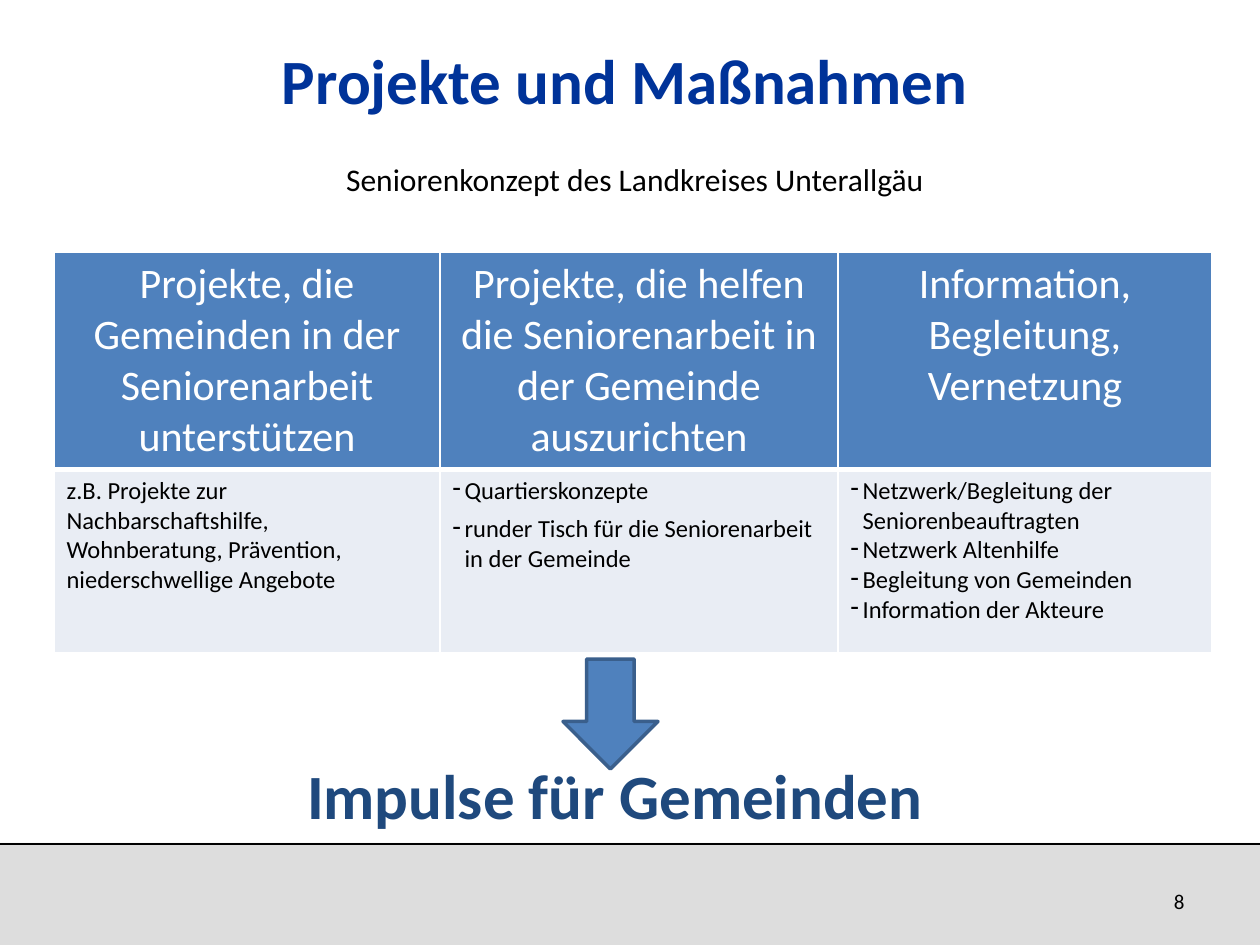
import pptx
import pptx.util
import pptx.dml.color
import pptx.enum.shapes
import pptx.enum.text
import pptx.oxml
import pptx.oxml.ns

ALIGN = pptx.enum.text.PP_ALIGN
ANCHOR = pptx.enum.text.MSO_ANCHOR
SHAPE = pptx.enum.shapes.MSO_SHAPE
BLUE, PALE, WHITE, BLACK = "4F81BD", "E9EDF4", "FFFFFF", "000000"


def px(length):
    return pptx.util.Emu(round(length * 914400 / 126))


def color(value):
    return pptx.dml.color.RGBColor.from_string(value)


def child(parent, tag, **attributes):
    element = pptx.oxml.parse_xml(f"<a:{tag} {pptx.oxml.ns.nsdecls('a')}/>")
    for key, value in attributes.items():
        element.set(key, str(value))
    parent.append(element)
    return element


class SlideBuilder:
    font_name = "Calibri"

    def __init__(self, slide):
        self.slide = slide

    def paragraphs(self, frame, lines, size, ink, align=ALIGN.LEFT, bold=False, bullet=None, gap=0):
        frame.word_wrap = True
        for index, line in enumerate(lines):
            paragraph = frame.paragraphs[0] if index == 0 else frame.add_paragraph()
            paragraph.alignment = align
            if index and gap:
                paragraph.space_before = pptx.util.Pt(gap)
            if bullet:
                properties = paragraph._p.get_or_add_pPr()
                properties.set("marL", str(px(12)))
                properties.set("indent", str(-px(12)))
                child(properties, "buChar", char=bullet)
            run = paragraph.add_run()
            run.text = line
            run.font.name = self.font_name
            run.font.size = pptx.util.Pt(size)
            run.font.bold = bold
            run.font.color.rgb = color(ink)

    def title(self, box, line, size, ink):
        title = self.slide.shapes.title
        title.left, title.top, title.width, title.height = map(px, box)
        title.text_frame.vertical_anchor = ANCHOR.MIDDLE
        self.paragraphs(title.text_frame, [line], size, ink, ALIGN.CENTER, True)

    def text(self, box, line, size, ink, align=ALIGN.CENTER, bold=False, anchor=ANCHOR.TOP):
        frame = self.slide.shapes.add_textbox(*map(px, box)).text_frame
        frame.vertical_anchor = anchor
        self.paragraphs(frame, [line], size, ink, align, bold)

    def shape(self, kind, box, fill, outline=None, width=0):
        shape = self.slide.shapes.add_shape(kind, *map(px, box))
        shape.shadow.inherit = False
        shape.fill.solid()
        shape.fill.fore_color.rgb = color(fill)
        if outline:
            shape.line.color.rgb = color(outline)
            shape.line.width = pptx.util.Pt(width)
        else:
            shape.line.fill.background()

    def line(self, start, end, ink, width):
        line = self.slide.shapes.add_connector(
            pptx.enum.shapes.MSO_CONNECTOR.STRAIGHT, *map(px, start + end))
        line.line.color.rgb = color(ink)
        line.line.width = pptx.util.Pt(width)
        child(line._element.spPr, "effectLst")

    def table(self, box, widths, heights):
        table = self.slide.shapes.add_table(len(heights), len(widths), *map(px, box)).table
        for column, width in zip(table.columns, widths):
            column.width = px(width)
        for row, height in zip(table.rows, heights):
            row.height = px(height)
        return table

    def cell(self, cell, fill, borders, lines, size, ink, **style):
        properties = cell._tc.get_or_add_tcPr()
        for side, width in zip("LRTB", borders):
            border = child(properties, f"ln{side}", w=pptx.util.Pt(width))
            child(child(border, "solidFill"), "srgbClr", val=WHITE)
        cell.fill.solid()
        cell.fill.fore_color.rgb = color(fill)
        self.paragraphs(cell.text_frame, lines, size, ink, **style)


def main():
    presentation = pptx.Presentation()
    presentation.slide_width, presentation.slide_height = px(1260), px(945)
    builder = SlideBuilder(presentation.slides.add_slide(presentation.slide_layouts[5]))

    builder.shape(SHAPE.RECTANGLE, (0, 843, 1260, 102), "DDDDDD")
    builder.line((0, 844), (1260, 844), BLACK, 0.75)
    builder.title((58, 26, 1134, 107), "Projekte und Maßnahmen", 36, "003399")

    project_groups = [
        (["Projekte, die Gemeinden in der Seniorenarbeit unterstützen"],
         ["z.B. Projekte zur Nachbarschaftshilfe,",
          "Wohnberatung, Prävention, niederschwellige Angebote"], {}),
        (["Projekte, die helfen die Seniorenarbeit in der Gemeinde auszurichten"],
         ["Quartierskonzepte", "runder Tisch für die Seniorenarbeit in der Gemeinde"],
         {"bullet": "-", "gap": 5}),
        (["Information, Begleitung,", "Vernetzung"],
         ["Netzwerk/Begleitung der Seniorenbeauftragten", "Netzwerk Altenhilfe",
          "Begleitung von Gemeinden", "Information der Akteure"],
         {"bullet": "-"}),
    ]
    projects = builder.table((54, 252, 1158, 400), (386, 398, 374), (217, 183))
    for column, (heading, examples, style) in enumerate(project_groups):
        builder.cell(projects.cell(0, column), BLUE, (1, 1, 1, 3), heading, 24, WHITE,
                     align=ALIGN.CENTER)
        builder.cell(projects.cell(1, column), PALE, (1, 1, 3, 1), examples, 14, BLACK, **style)

    builder.shape(SHAPE.DOWN_ARROW, (563, 659, 95, 110), BLUE, "3A5F8C", 2)
    builder.text((233, 750, 764, 89), "Impulse für Gemeinden", 36, "1F497D", bold=True)
    builder.text((1096, 876, 101, 50), "8", 12, BLACK, ALIGN.RIGHT, anchor=ANCHOR.MIDDLE)
    builder.text((64, 154, 1142, 50), "Seniorenkonzept des Landkreises Unterallgäu", 18, BLACK)
    presentation.save("out.pptx")


if __name__ == "__main__":
    main()
